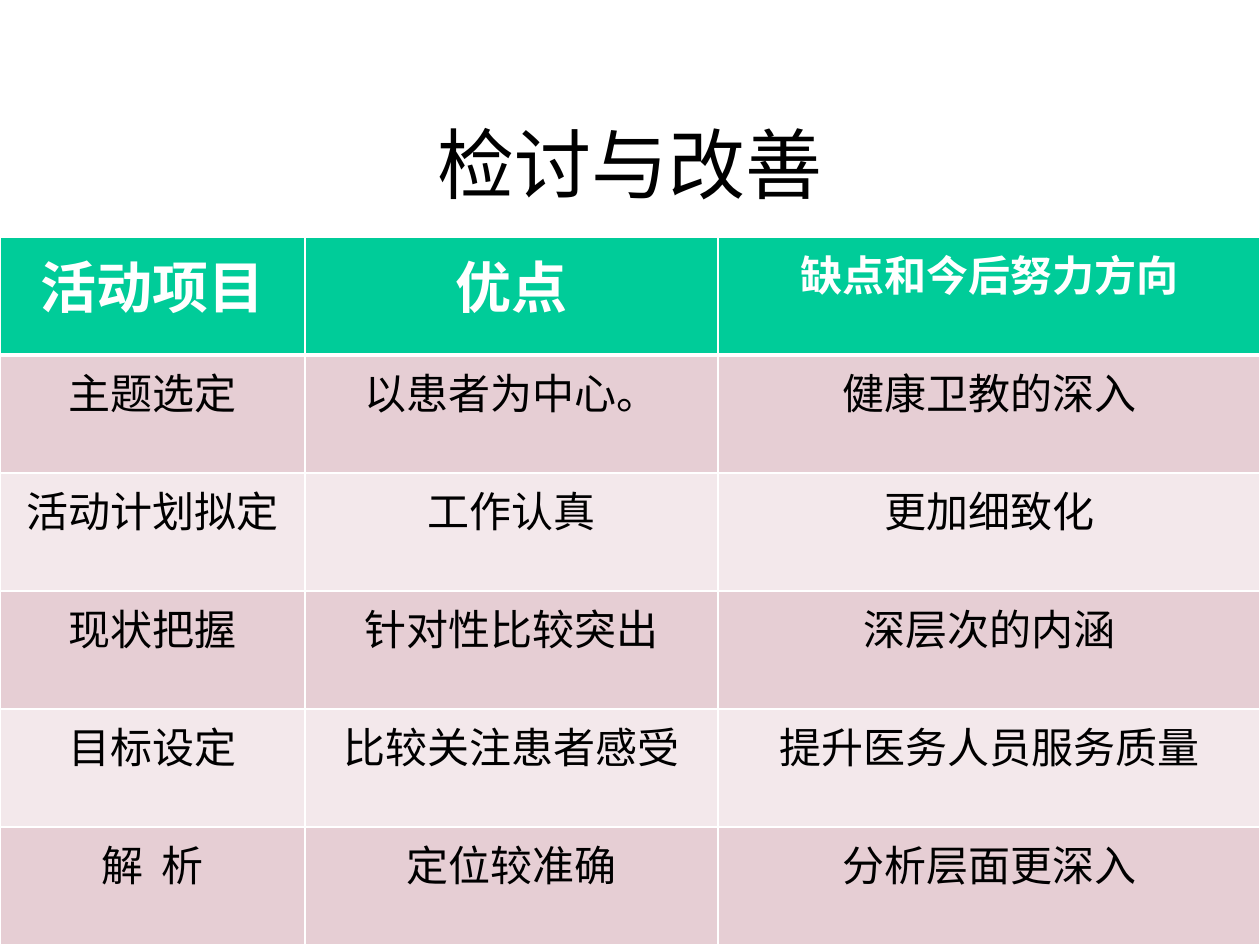
from dataclasses import dataclass
from typing import NamedTuple

from lxml.etree import SubElement
from pptx import Presentation
from pptx.dml.color import RGBColor
from pptx.enum.text import MSO_ANCHOR, PP_ALIGN
from pptx.oxml.ns import qn
from pptx.util import Inches, Pt


@dataclass(frozen=True)
class Theme:
    title_font: str = "Noto Sans CJK SC"
    latin_font: str = "Times New Roman"
    asian_font: str = "Noto Sans CJK SC"
    title_size: int = 44
    heading_size: int = 32
    body_size: int = 24
    text: str = "000000"
    white: str = "FFFFFF"
    header_fill: str = "00CC99"
    band_fills: tuple[str, str] = ("E6CED4", "F3E8EB")
    thin_line: int = 1
    thick_line: int = 3


class ReviewRow(NamedTuple):
    activity: str
    strength: str
    improvement: str


class TextStyle(NamedTuple):
    font: str
    size: int
    color: str
    bold: bool = False


THEME = Theme()
HEADER = ReviewRow("活动项目", "优点", "缺点和今后努力方向")
REVIEWS = [
    ReviewRow("主题选定", "以患者为中心。", "健康卫教的深入"),
    ReviewRow("活动计划拟定", "工作认真", "更加细致化"),
    ReviewRow("现状把握", "针对性比较突出", "深层次的内涵"),
    ReviewRow("目标设定", "比较关注患者感受", "提升医务人员服务质量"),
    ReviewRow("解  析", "定位较准确", "分析层面更深入"),
]
COLUMN_WIDTHS = (2.42, 3.28, 4.3)
TABLE_TOP, TABLE_HEIGHT = 1.88, 5.62


def write_text(text_frame, text: str, style: TextStyle) -> None:
    """Write one centred paragraph in the given style."""
    text_frame.text = text
    paragraph = text_frame.paragraphs[0]
    paragraph.alignment = PP_ALIGN.CENTER
    for run in paragraph.runs:
        run.font.name = style.font
        run.font.size = Pt(style.size)
        run.font.bold = style.bold
        run.font.color.rgb = RGBColor.from_string(style.color)
        SubElement(run.font._element, qn("a:ea"), typeface=THEME.asian_font)


def set_borders(cell, top: int, bottom: int) -> None:
    """Draw white borders; they must precede the fill in the cell properties."""
    properties = cell._tc.get_or_add_tcPr()
    sides = {"L": THEME.thin_line, "R": THEME.thin_line, "T": top, "B": bottom}
    for side, width in sides.items():
        line = SubElement(properties, qn(f"a:ln{side}"), w=str(Pt(width)))
        fill = SubElement(line, qn("a:solidFill"))
        SubElement(fill, qn("a:srgbClr"), val=THEME.white)


def add_title(slide, text: str) -> None:
    title = slide.shapes.title
    title.left, title.top = Inches(0.75), Inches(0.67)
    title.width, title.height = Inches(8.5), Inches(1.25)
    title.text_frame.vertical_anchor = MSO_ANCHOR.MIDDLE
    write_text(title.text_frame, text, TextStyle(THEME.title_font, THEME.title_size, THEME.text))


def add_review_table(slide, rows: list[ReviewRow]) -> None:
    table = slide.shapes.add_table(
        len(rows), len(COLUMN_WIDTHS), Inches(0), Inches(TABLE_TOP),
        Inches(sum(COLUMN_WIDTHS)), Inches(TABLE_HEIGHT),
    ).table
    for column, width in zip(table.columns, COLUMN_WIDTHS):
        column.width = Inches(width)

    for row_index, row in enumerate(rows):
        is_header = row_index == 0
        band = THEME.band_fills[(row_index - 1) % 2]
        # A thick rule separates the header from the first review
        top = THEME.thick_line if row_index == 1 else THEME.thin_line
        bottom = THEME.thick_line if is_header else THEME.thin_line
        for column_index, text in enumerate(row):
            cell = table.cell(row_index, column_index)
            set_borders(cell, top, bottom)
            cell.fill.solid()
            cell.fill.fore_color.rgb = RGBColor.from_string(THEME.header_fill if is_header else band)
            large = is_header and column_index < 2
            size = THEME.heading_size if large else THEME.body_size
            color = THEME.white if is_header else THEME.text
            write_text(cell.text_frame, text, TextStyle(THEME.latin_font, size, color, is_header))


def main() -> None:
    presentation = Presentation()
    presentation.slide_width, presentation.slide_height = Inches(10), Inches(7.5)
    slide = presentation.slides.add_slide(presentation.slide_layouts.get_by_name("Title Only"))
    add_title(slide, "检讨与改善")
    add_review_table(slide, [HEADER, *REVIEWS])
    presentation.save("out.pptx")


if __name__ == "__main__":
    main()
